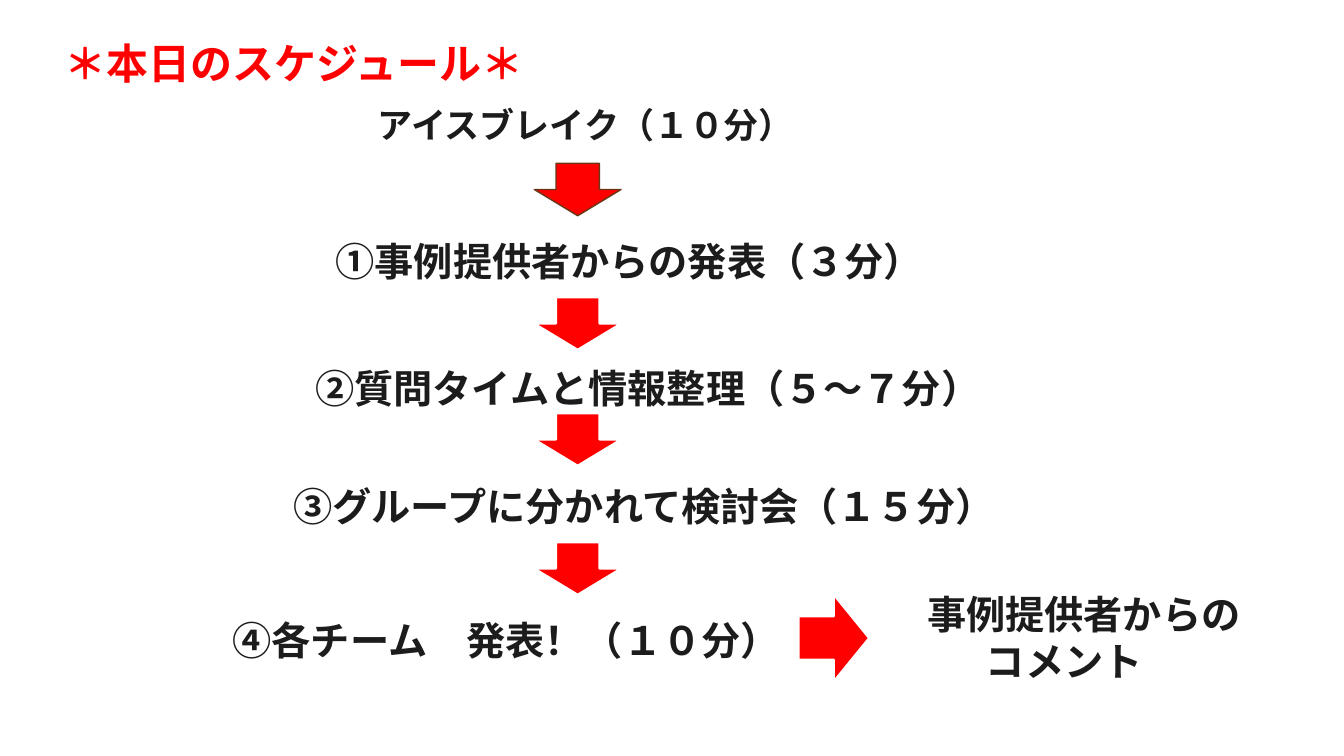
import pptx
import pptx.dml.color
import pptx.enum.shapes
import pptx.enum.text
import pptx.oxml
import pptx.oxml.ns
import pptx.util
from dataclasses import dataclass

Inches = pptx.util.Inches
Align = pptx.enum.text.PP_ALIGN


@dataclass(frozen=True)
class Theme:
    font: str = "Noto Sans CJK JP"
    red: str = "FF0000"
    ink: str = "1D1C1D"
    white: str = "FFFFFF"
    brown: str = "683715"
    title_size: int = 30
    step_size: int = 28
    intro_size: int = 25


THEME = Theme()

# Schedule steps: text, left, top, width, height, type size
STEPS = [
    ("アイスブレイク（１０分）　", 3.65, 0.98, 4.97, 0.52, THEME.intro_size),
    ("①事例提供者からの発表（３分）", 3.23, 2.31, 7.21, 0.57, THEME.step_size),
    ("②質問タイムと情報整理（５～７分）　", 3.03, 3.57, 7.6, 0.57, THEME.step_size),
    ("③グループに分かれて検討会（１５分）", 2.81, 4.74, 8.35, 0.57, THEME.step_size),
    ("④各チーム　発表！（１０分）　", 2.21, 6.07, 7.23, 0.57, THEME.step_size),
]

# Arrows between steps: top, outline colour, outline width
STEP_ARROWS = [
    (1.62, THEME.brown, 1),
    (2.95, THEME.white, 1.5),
    (4.1, THEME.white, 1.5),
    (5.38, THEME.white, 1.5),
]


def rgb(value):
    return pptx.dml.color.RGBColor.from_string(value)


def set_attributes(target, values):
    for name, value in values.items():
        setattr(target, name, value)


def write_text(shape, lines, size, color, align=Align.LEFT):
    frame = shape.text_frame
    set_attributes(frame, {
        "word_wrap": True,
        "auto_size": pptx.enum.text.MSO_AUTO_SIZE.SHAPE_TO_FIT_TEXT,
        "vertical_anchor": pptx.enum.text.MSO_ANCHOR.TOP,
    })
    frame.text = "\n".join(lines)
    for paragraph in frame.paragraphs:
        set_attributes(paragraph, {"alignment": align, "line_spacing": 1.0})
        for run in paragraph.runs:
            set_attributes(run.font, {
                "name": THEME.font, "size": pptx.util.Pt(size), "bold": True})
            run.font.color.rgb = rgb(color)
            # Japanese characters take the East Asian typeface
            east_asian = pptx.oxml.ns.qn("a:ea")
            properties = run.font._element
            pptx.oxml.xmlchemy.OxmlElement  # element factory
            element = properties.makeelement(east_asian, {"typeface": THEME.font})
            properties.find(pptx.oxml.ns.qn("a:latin")).addnext(element)


def add_title(slide, text, left, top, width, height):
    title = slide.shapes.title
    set_attributes(title, {
        "left": Inches(left), "top": Inches(top),
        "width": Inches(width), "height": Inches(height)})
    write_text(title, [text], THEME.title_size, THEME.red)


def add_label(slide, lines, left, top, width, height, size, align=Align.LEFT):
    box = slide.shapes.add_textbox(
        Inches(left), Inches(top), Inches(width), Inches(height))
    write_text(box, lines, size, THEME.ink, align)


def add_arrow(slide, left, top, height, outline, outline_width, rotation=0):
    arrow = slide.shapes.add_shape(
        pptx.enum.shapes.MSO_SHAPE.DOWN_ARROW,
        Inches(left), Inches(top), Inches(0.86), Inches(height))
    arrow.rotation = rotation
    arrow.shadow.inherit = False
    arrow.fill.solid()
    arrow.fill.fore_color.rgb = rgb(THEME.red)
    arrow.line.color.rgb = rgb(outline)
    arrow.line.width = pptx.util.Pt(outline_width)


def main():
    presentation = pptx.Presentation()
    set_attributes(presentation, {
        "slide_width": Inches(13.33), "slide_height": Inches(7.5)})
    slide = presentation.slides.add_slide(presentation.slide_layouts[5])

    # Heading
    add_title(slide, "＊本日のスケジュール＊　", 0.54, 0.32, 6.67, 0.61)

    # Steps from top to bottom
    for text, *box, size in STEPS:
        add_label(slide, [text], *box, size)
    for top, outline, outline_width in STEP_ARROWS:
        add_arrow(slide, 5.3, top, 0.52, outline, outline_width)

    # Closing comment to the right of the last step
    add_arrow(slide, 7.84, 5.98, 0.7, THEME.white, 1.5, rotation=270)
    add_label(slide, ["事例提供者からの", "コメント　"],
              8.85, 5.81, 3.8, 1.04, THEME.step_size, Align.CENTER)

    presentation.save("out.pptx")


if __name__ == "__main__":
    main()
